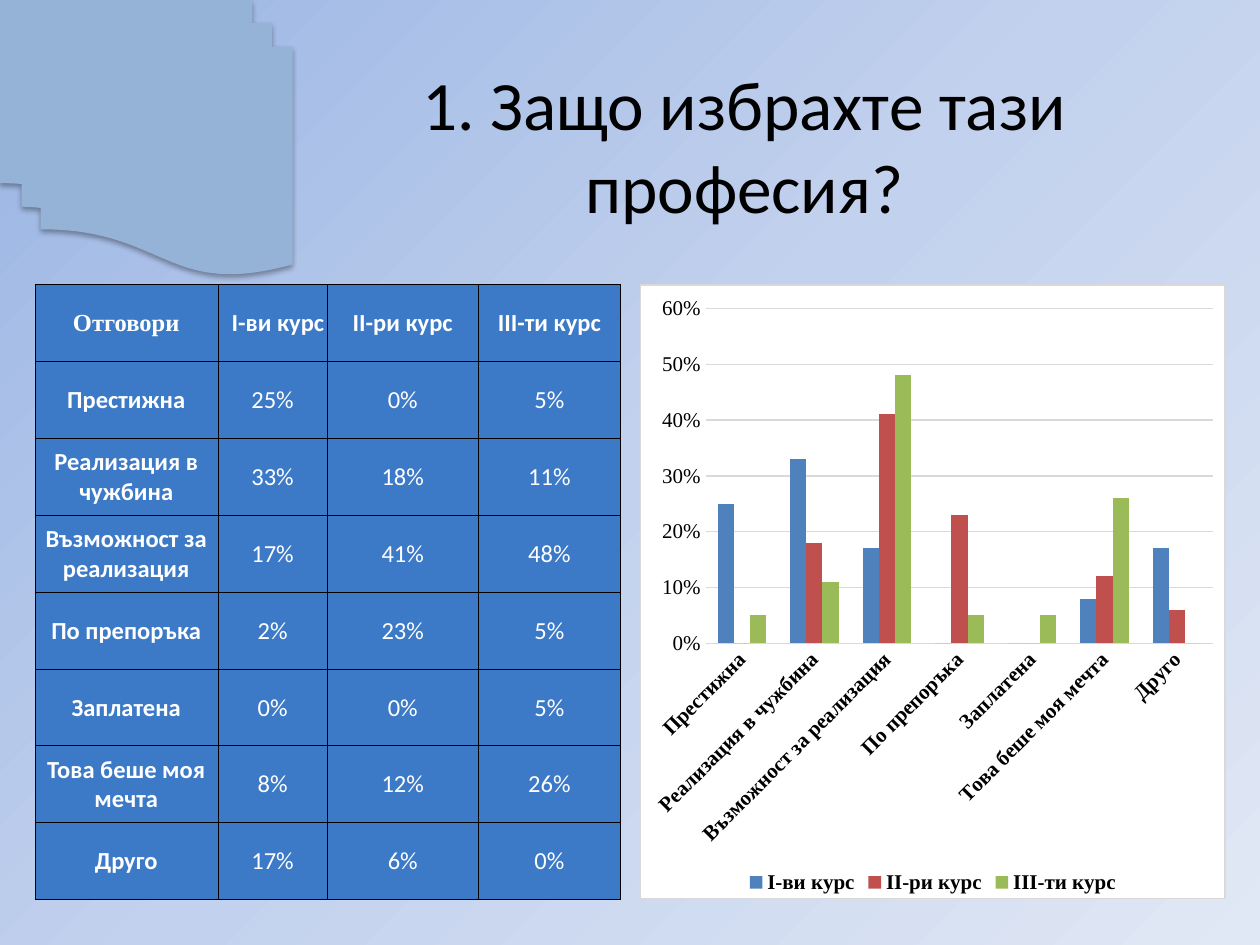
from copy import deepcopy

from lxml.etree import fromstring
from pptx import Presentation
from pptx.chart.data import CategoryChartData
from pptx.dml.color import RGBColor
from pptx.enum.chart import XL_CHART_TYPE as ChartType, XL_LEGEND_POSITION as LegendPosition
from pptx.enum.chart import XL_TICK_MARK as TickMark
from pptx.enum.shapes import MSO_SHAPE as Preset
from pptx.enum.text import MSO_ANCHOR as Anchor, PP_ALIGN as Align
from pptx.oxml.ns import nsdecls, qn
from pptx.util import Cm, Pt

TITLE = "1. Защо избрахте тази професия?"
HEADER = ["Отговори", "I-ви курс", "II-ри курс", "III-ти курс"]
ANSWERS = [
    ("Престижна", 25, 0, 5),
    ("Реализация в чужбина", 33, 18, 11),
    ("Възможност за реализация", 17, 41, 48),
    ("По препоръка", 2, 23, 5),
    ("Заплатена", 0, 0, 5),
    ("Това беше моя мечта", 8, 12, 26),
    ("Друго", 17, 6, 0),
]
CHART_VALUES = {
    "I-ви курс": [0.25, 0.33, 0.17, 0, 0, 0.08, 0.17],
    "II-ри курс": [0, 0.18, 0.41, 0.23, 0, 0.12, 0.06],
    "III-ти курс": [0.05, 0.11, 0.48, 0.05, 0.05, 0.26, 0],
}
SERIES_COLORS = ["4F81BD", "C0504D", "9BBB59"]
BACKGROUND = [(0, "9AB5E4"), (0.5, "C2D1ED"), (1, "E1E8F5")]
COLUMN_WIDTHS = [3.69, 2.21, 3.04, 2.87]
PANEL_TOP, PANEL_WIDTH, PANEL_HEIGHT = Cm(5.73), Cm(11.81), Cm(12.4)
SERIF, SANS = "Times New Roman", "Calibri"


def rgb(value):
    """Turn a hex string into a colour."""
    return RGBColor.from_string(value)


def element(xml):
    """Build an element from markup that uses the a: and c: prefixes."""
    head, mark, rest = xml.partition(">")
    slash = "/" if head.endswith("/") else ""
    return fromstring(f"{head.rstrip('/')} {nsdecls('a', 'c')}{slash}{mark}{rest}")


def set_font(font, color="000000", **values):
    """Apply a colour and other format values to a font."""
    font.color.rgb = rgb(color)
    for name, value in values.items():
        setattr(font, name, value)


def paint_background(page):
    """Give the page a three-stop diagonal gradient."""
    fill = page.background.fill
    fill.gradient()
    stops = page._element.find(".//" + qn("a:gsLst"))
    stops.insert(1, deepcopy(stops[0]))
    for stop, (position, color) in zip(fill.gradient_stops, BACKGROUND):
        stop.position = position
        stop.color.rgb = rgb(color)
    fill.gradient_angle = 315


def add_documents(page):
    """Draw the mirrored stack of sheets in the corner."""
    sheets = page.shapes.add_shape(Preset.FLOWCHART_MULTIDOCUMENT, 0, 0, Cm(5.9), Cm(5.54))
    sheets.fill.solid()
    sheets.fill.fore_color.rgb = rgb("95B3D7")
    sheets.line.fill.background()
    properties = sheets._element.spPr
    properties.xfrm.set("flipH", "1")
    properties.append(element(
        f'<a:effectLst><a:outerShdw blurRad="{Pt(3.1)}" dist="{Pt(1.8)}" dir="5400000" rotWithShape="0">'
        '<a:srgbClr val="000000"><a:alpha val="35000"/></a:srgbClr></a:outerShdw></a:effectLst>'))


def add_title(page):
    """Place and format the title placeholder."""
    title = page.shapes.title
    title.left, title.top, title.width, title.height = Cm(5.9), Cm(1.32), Cm(18.21), Cm(3.18)
    frame = title.text_frame
    frame.text = TITLE
    frame.vertical_anchor = Anchor.MIDDLE
    para = frame.paragraphs[0]
    para.alignment = Align.CENTER
    set_font(para.runs[0].font, size=Pt(39.6), name=SANS)


def format_cell(cell, text, bold, name):
    """Fill one table cell with centred text and thin borders."""
    cell.text = text
    cell.vertical_anchor = Anchor.MIDDLE
    cell.margin_left = cell.margin_right = cell.margin_top = Cm(0.02)
    cell.margin_bottom = 0
    cell.fill.solid()
    cell.fill.fore_color.rgb = rgb("3C7AC7")
    para = cell.text_frame.paragraphs[0]
    para.alignment = Align.CENTER
    set_font(para.runs[0].font, "FFFFFF", size=Pt(14), bold=bold, name=name)
    properties = cell._tc.get_or_add_tcPr()
    for index, side in enumerate("LRTB"):
        properties.insert(index, element(
            f'<a:ln{side} w="{Pt(0.25)}"><a:solidFill><a:srgbClr val="000000"/></a:solidFill></a:ln{side}>'))


def add_answers(page):
    """Add the table of answers by year."""
    rows = [HEADER] + [[answer] + [f"{share}%" for share in shares] for answer, *shares in ANSWERS]
    table = page.shapes.add_table(
        len(rows), len(HEADER), Cm(0.7), PANEL_TOP, PANEL_WIDTH, PANEL_HEIGHT).table
    for column, width in zip(table.columns, COLUMN_WIDTHS):
        column.width = Cm(width)
    for r, row in enumerate(rows):
        for c, text in enumerate(row):
            format_cell(table.cell(r, c), text, r == 0 or c == 0, SERIF if r == c == 0 else SANS)
    table.cell(0, 1).margin_left = Cm(0.24)


def add_answer_chart(page):
    """Add the clustered column chart of the answers."""
    data = CategoryChartData(number_format="0%")
    data.categories = [answer for answer, *_ in ANSWERS]
    for name, values in CHART_VALUES.items():
        data.add_series(name, values)
    chart = page.shapes.add_chart(
        ChartType.COLUMN_CLUSTERED, Cm(12.9), PANEL_TOP, PANEL_WIDTH, PANEL_HEIGHT, data).chart
    set_font(chart.font, size=Pt(10), name=SANS)
    chart._chartSpace.chart.addnext(element(
        '<c:spPr><a:solidFill><a:srgbClr val="FFFFFF"/></a:solidFill>'
        f'<a:ln w="{Pt(0.75)}"><a:solidFill><a:srgbClr val="D9D9D9"/></a:solidFill></a:ln></c:spPr>'))
    chart.has_title = False
    chart.has_legend = True
    chart.legend.position = LegendPosition.BOTTOM
    chart.legend.include_in_layout = False
    set_font(chart.legend.font, size=Pt(12), bold=True, name=SERIF)

    plot = chart.plots[0]
    plot.gap_width, plot.overlap, plot.vary_by_categories = 150, 0, False
    for series, color in zip(plot.series, SERIES_COLORS):
        series.format.fill.solid()
        series.format.fill.fore_color.rgb = rgb(color)

    for axis, bold in ((chart.category_axis, True), (chart.value_axis, False)):
        axis.major_tick_mark = axis.minor_tick_mark = TickMark.NONE
        axis.format.line.fill.background()
        set_font(axis.tick_labels.font, size=Pt(12), bold=bold, name=SERIF)
    chart.category_axis._element.find(".//" + qn("a:bodyPr")).set("rot", "-2700000")
    shares = chart.value_axis
    shares.minimum_scale, shares.maximum_scale, shares.major_unit = 0, 0.6, 0.1
    shares.tick_labels.number_format = "0%"
    shares.tick_labels.number_format_is_linked = False
    shares.has_major_gridlines = True
    grid = shares.major_gridlines.format.line
    grid.width = Pt(0.75)
    grid.color.rgb = rgb("D9D9D9")


def main():
    """Build and save the slide."""
    deck = Presentation()
    deck.slide_width, deck.slide_height = Cm(25.4), Cm(19.05)
    page = deck.slides.add_slide(deck.slide_layouts[5])
    for build in (paint_background, add_documents, add_title, add_answers, add_answer_chart):
        build(page)
    deck.save("out.pptx")


if __name__ == "__main__":
    main()
